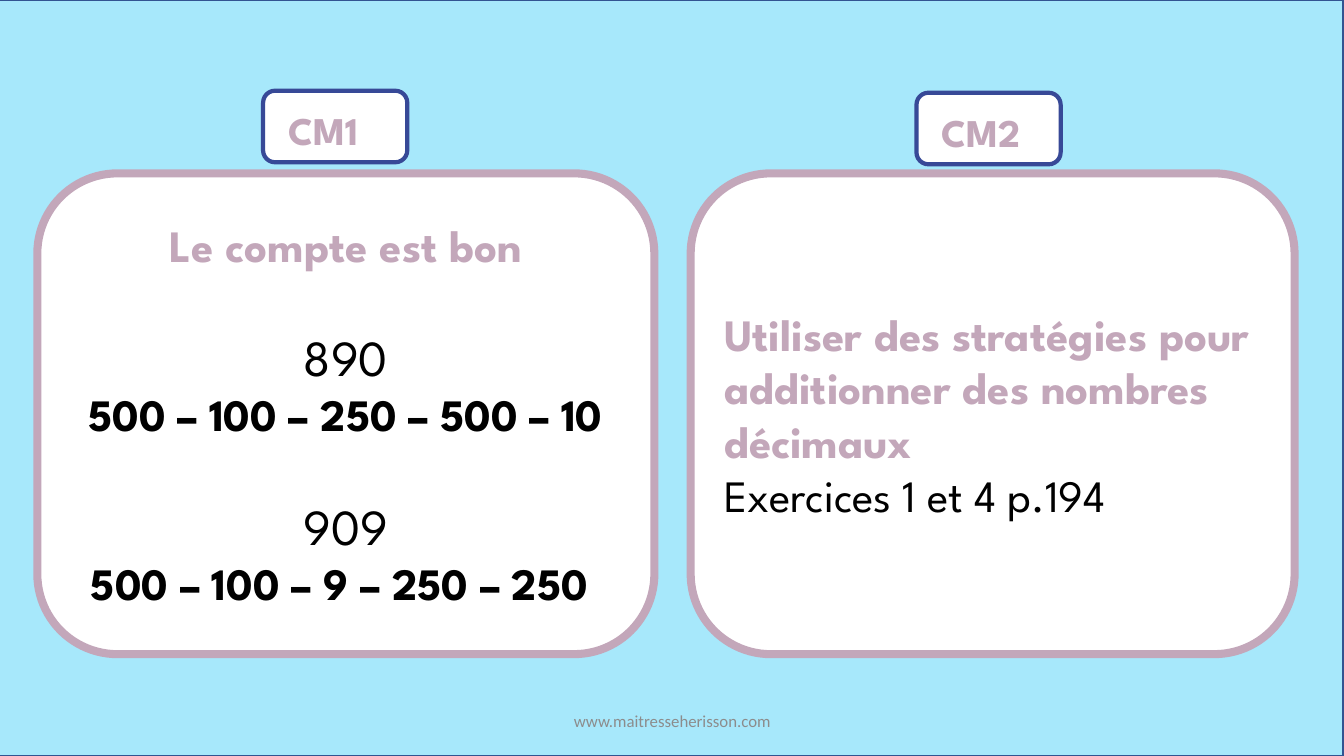
from pptx import Presentation, util as u
from pptx.dml import color
from pptx.enum import shapes, text

SPARTAN = "League Spartan"
MAUVE, BLACK, WHITE, NAVY = "C3A7BA", "000000", "FFFFFF", "374997"
CENTER, LEFT = text.PP_ALIGN.CENTER, text.PP_ALIGN.LEFT
TOP, MIDDLE = text.MSO_ANCHOR.TOP, text.MSO_ANCHOR.MIDDLE
BLOCK_GAP = 39

HEADING = {"name": SPARTAN, "size": u.Pt(32), "bold": True, "color": MAUVE}
NUMBERS = {**HEADING, "color": BLACK}
TARGET = {**NUMBERS, "size": u.Pt(36), "bold": False}
EXERCISE = {**NUMBERS, "bold": False}
LEVEL = {**HEADING, "size": u.Pt(28)}
FOOTER = {"name": "Calibri", "size": u.Pt(12), "bold": False, "color": "8C8C8C"}

CM1_LINES = [
    ("Le compte est bon", HEADING, 0),
    ("890", TARGET, BLOCK_GAP),
    ("500 – 100 – 250 – 500 – 10", NUMBERS, 0),
    ("909", TARGET, BLOCK_GAP),
    ("500 – 100 – 9 – 250 – 250 ", NUMBERS, 0),
]
CM2_LINES = [
    ("Utiliser des stratégies pour additionner des nombres décimaux", HEADING, 0),
    ("Exercices 1 et 4 p.194", EXERCISE, 0),
]


def rgb(value):
    return color.RGBColor.from_string(value)


def write(box, lines, align=LEFT, anchor=TOP):
    frame = box.text_frame
    frame.word_wrap = True
    frame.vertical_anchor = anchor
    for index, (words, style, gap) in enumerate(lines):
        para = frame.add_paragraph() if index else frame.paragraphs[0]
        para.alignment = align
        if gap:
            para.space_before = u.Pt(gap)
        span = para.add_run()
        span.text = words
        for key, value in style.items():
            if key == "color":
                span.font.color.rgb = rgb(value)
            else:
                setattr(span.font, key, value)


def add_box(page, kind, place, fill, line, width):
    box = page.shapes.add_shape(kind, *map(u.Inches, place))
    box.shadow.inherit = False
    box.fill.solid()
    box.fill.fore_color.rgb = rgb(fill)
    box.line.color.rgb = rgb(line)
    box.line.width = u.Pt(width)
    return box


def add_label(page, place, words, style, align=LEFT, anchor=TOP):
    box = page.shapes.add_textbox(*map(u.Inches, place))
    write(box, [(words, style, 0)], align, anchor)


def add_tag(page, left, top, words):
    add_box(page, shapes.MSO_SHAPE.ROUNDED_RECTANGLE,
            (left, top, 1.43, 0.71), WHITE, NAVY, 3)
    add_label(page, (left + 0.15, top + 0.11, 1.1, 0.57), words, LEVEL)


def add_panel(page, left, width, lines, align):
    panel = add_box(page, shapes.MSO_SHAPE.ROUNDED_RECTANGLE,
                    (left, 1.72, width, 4.77), WHITE, MAUVE, 5.75)
    write(panel, lines, align, MIDDLE)


def main():
    deck = Presentation()
    deck.slide_width, deck.slide_height = u.Inches(13.33), u.Inches(7.5)
    page = deck.slides.add_slide(deck.slide_layouts.get_by_name("Blank"))
    add_box(page, shapes.MSO_SHAPE.RECTANGLE,
            (-0.01, 0, 13.33, 7.5), "A7E8FB", "325491", 1)
    add_tag(page, 2.61, 0.9, "CM1")
    add_panel(page, 0.37, 6.12, CM1_LINES, CENTER)
    add_panel(page, 6.85, 5.99, CM2_LINES, LEFT)
    add_tag(page, 9.09, 0.92, "CM2")
    add_label(page, (4.42, 6.95, 4.5, 0.4), "www.maitresseherisson.com",
              FOOTER, CENTER, MIDDLE)
    deck.save("out.pptx")


if __name__ == "__main__":
    main()
